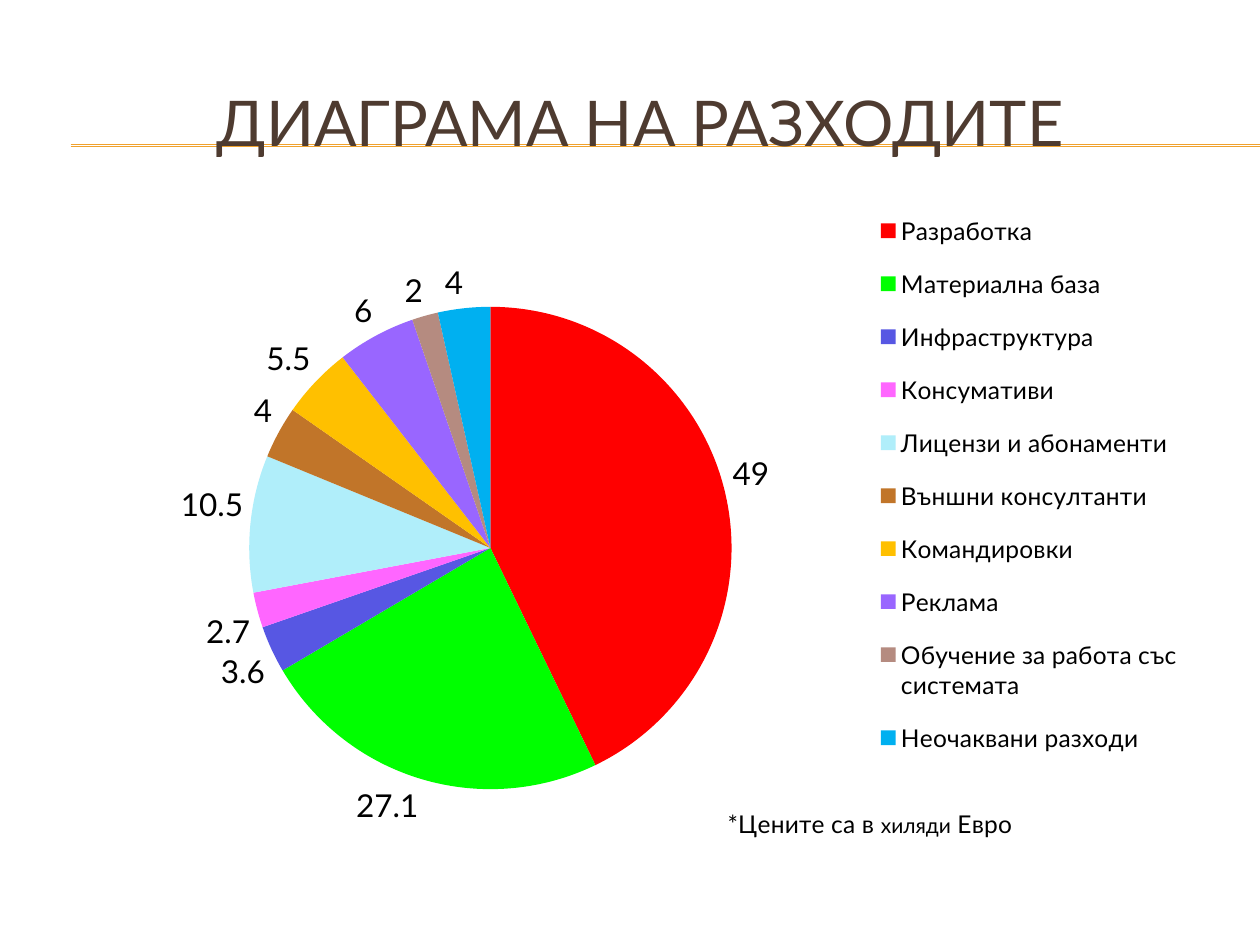
from dataclasses import dataclass

from lxml.etree import SubElement
from pptx import Presentation
from pptx.chart.data import CategoryChartData
from pptx.dml.color import RGBColor
from pptx.enum.chart import XL_CHART_TYPE, XL_LABEL_POSITION, XL_LEGEND_POSITION
from pptx.enum.shapes import MSO_CONNECTOR
from pptx.enum.text import MSO_ANCHOR, PP_ALIGN
from pptx.oxml import parse_xml
from pptx.oxml.ns import nsdecls, qn
from pptx.util import Inches, Pt


@dataclass(frozen=True)
class Theme:
    font: str = "Lato"
    title: str = "4E3B30"
    rule: str = "F0A22E"
    text: str = "000000"
    title_size: int = 36
    label_size: int = 18
    legend_size: int = 14
    small_size: int = 12
    rule_width: float = 0.75


THEME = Theme()
WIDTH, HEIGHT = Inches(10), Inches(7.5)
LEFT, SPAN = 0.033, 0.95

COSTS = [
    ("Разработка", 49, "FF0000"),
    ("Материална база", 27.1, "00FF00"),
    ("Инфраструктура", 3.6, "5757E3"),
    ("Консумативи", 2.7, "FF66FF"),
    ("Лицензи и абонаменти", 10.5, "B0EEFA"),
    ("Външни консултанти", 4, "C17529"),
    ("Командировки", 5.5, "FFC000"),
    ("Реклама", 6, "9966FF"),
    ("Обучение за работа със системата", 2, "B58B80"),
    ("Неочаквани разходи", 4, "00B0F0"),
]


def box(x, y, w, h):
    return int(WIDTH * x), int(HEIGHT * y), int(WIDTH * w), int(HEIGHT * h)


def apply(obj, values):
    for name, value in values.items():
        setattr(obj, name, value)


def style(font, size, color=THEME.text):
    apply(font, {"name": THEME.font, "size": Pt(size), "bold": False})
    font.color.rgb = RGBColor.from_string(color)


def set_layout(element, **values):
    for old in element.findall(qn("c:layout")):
        element.remove(old)
    layout = parse_xml(f"<c:layout {nsdecls('c')}><c:manualLayout/></c:layout>")
    for name, value in values.items():
        SubElement(layout[0], qn(f"c:{name}")).set("val", str(value))
    before = [e for e in element if e.tag in (qn("c:tx"), qn("c:legendPos"))]
    element.insert(len(before), layout)


def add_rule(s, y):
    x, top, w, _ = box(0.056, y, 0.944, 0)
    line = s.shapes.add_connector(MSO_CONNECTOR.STRAIGHT, x, top, x + w, top)
    line.line.color.rgb = RGBColor.from_string(THEME.rule)
    line.line.width = Pt(THEME.rule_width)
    SubElement(line._element.spPr, qn("a:effectLst"))


def add_title(s, text):
    sp = s.shapes.add_textbox(*box(LEFT, 0.067, SPAN, 0.123))
    tf = sp.text_frame
    apply(tf, {"word_wrap": True, "vertical_anchor": MSO_ANCHOR.MIDDLE})
    p = tf.paragraphs[0]
    p.alignment = PP_ALIGN.CENTER
    r = p.add_run()
    r.text = text
    style(r.font, THEME.title_size, THEME.title)


def add_note(chart, parts):
    p = chart.chart_title.text_frame.paragraphs[0]
    for text, size in parts:
        r = p.add_run()
        r.text = text
        style(r.font, size)
    apply(chart.chart_title, {"include_in_layout": True})
    set_layout(chart.chart_title._element, xMode="edge", yMode="edge", x=0.57, y=0.93)


def add_legend(chart):
    chart.has_legend = True
    apply(chart.legend, {"position": XL_LEGEND_POSITION.RIGHT, "include_in_layout": False})
    style(chart.legend.font, THEME.legend_size)
    set_layout(chart.legend._element, xMode="edge", yMode="edge",
               x=0.68, y=0.02, w=0.29, h=0.87)


def add_pie(s, costs):
    names, values, colors = zip(*costs)
    data = CategoryChartData()
    data.categories = names
    data.add_series("Series 1", values)
    chart = s.shapes.add_chart(
        XL_CHART_TYPE.PIE, *box(LEFT, 0.19, SPAN, 0.709), data).chart
    style(chart.font, THEME.label_size)
    plot = chart.plots[0]
    apply(plot, {"vary_by_categories": True, "has_data_labels": True})
    apply(plot.data_labels, {"show_value": True, "show_percentage": False,
                             "position": XL_LABEL_POSITION.OUTSIDE_END})
    style(plot.data_labels.font, THEME.label_size)
    for i, color in enumerate(colors):
        fill = plot.series[0].points[i].format.fill
        fill.solid()
        fill.fore_color.rgb = RGBColor.from_string(color)
    set_layout(chart._chartSpace.chart.plotArea, layoutTarget="inner",
               xMode="edge", yMode="edge", x=0.17, y=0.19, w=0.41, h=0.72)
    return chart


def main():
    prs = Presentation()
    apply(prs, {"slide_width": WIDTH, "slide_height": HEIGHT})
    s = prs.slides.add_slide(prs.slide_layouts[6])
    for y in (0.153, 0.155):
        add_rule(s, y)
    add_title(s, "ДИАГРАМА НА РАЗХОДИТЕ")
    chart = add_pie(s, COSTS)
    add_legend(chart)
    add_note(chart, [("*Цените са в ", THEME.legend_size),
                     ("хиляди", THEME.small_size),
                     (" Евро", THEME.legend_size)])
    prs.save("out.pptx")


if __name__ == "__main__":
    main()
